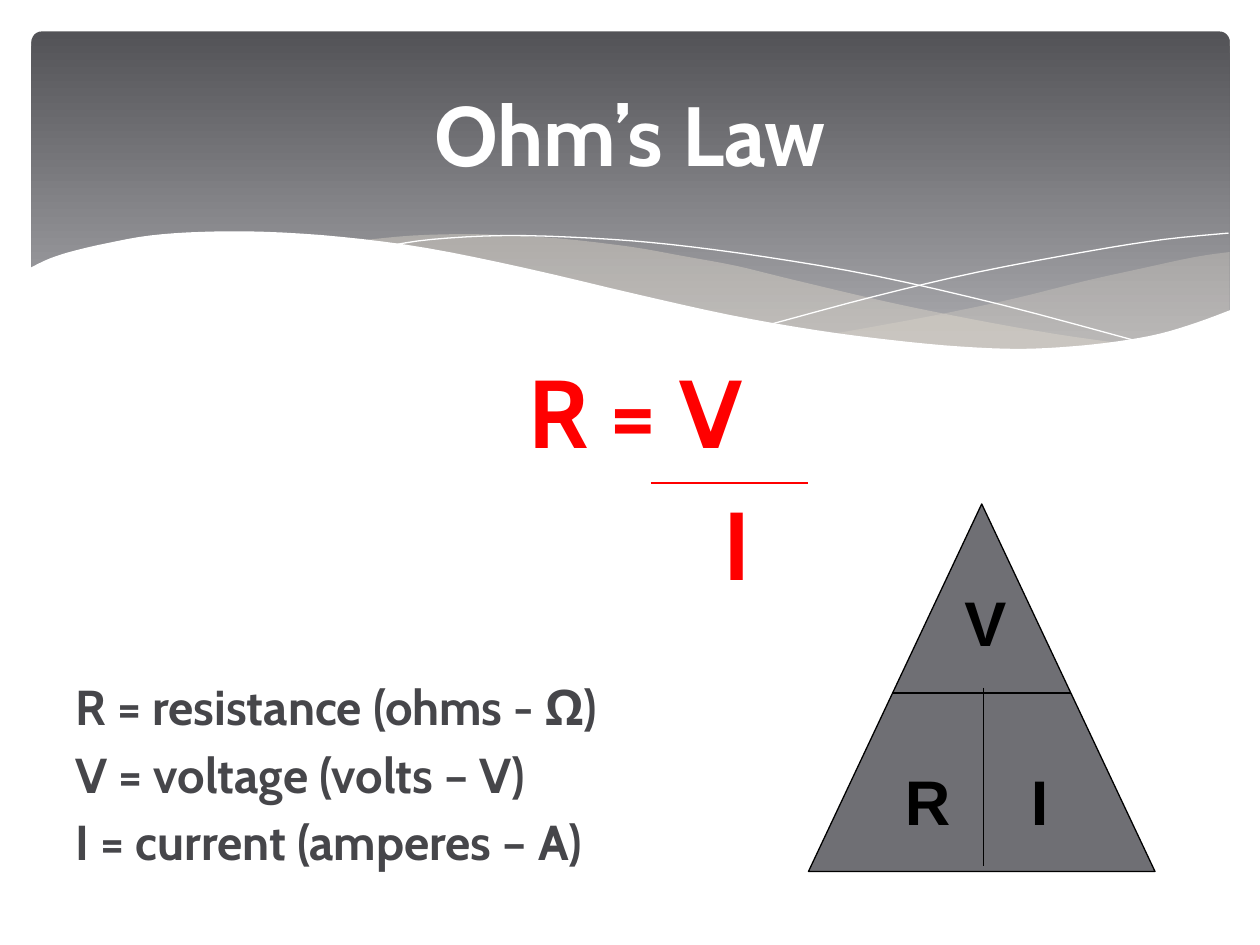
import pptx
import pptx.dml.color
import pptx.enum.shapes
import pptx.enum.text
import pptx.oxml.ns
import pptx.oxml.xmlchemy
import pptx.util

Pt = pptx.util.Pt
SHAPES = pptx.enum.shapes.MSO_SHAPE
ALIGN = pptx.enum.text.PP_ALIGN
ANCHOR = pptx.enum.text.MSO_ANCHOR

RIGHT_SWELL = [
    [(702.7, 144), (682.6, 146.9), (652.3, 153.4), (619.9, 160.6), (579.6, 170.6),
     (542.2, 178.6), (508.3, 185), (475.9, 190.8)],
    [(475.9, 190.8), (507.6, 195.1), (536.4, 198), (562.3, 199.4), (586.1, 200.2),
     (614.9, 198.7), (640.1, 195.8), (663.1, 190.8), (683.3, 185), (702.7, 177.8)],
]
LEFT_SWELL = [
    [(643, 196.6), (602.6, 190.8), (558, 182.9), (508.3, 172.8), (452.9, 159.8),
     (420.5, 151.9), (389.5, 146.2), (360.7, 141.1), (317.5, 136.1), (273.6, 133.9),
     (236.2, 134.6), (205.9, 137.5)],
    [(205.9, 137.5), (246.2, 143.3), (290.9, 151.9), (353.5, 167), (407.5, 178.6),
     (456.5, 187.9), (500.4, 194.4), (538.6, 198.7), (573.1, 200.9), (610.6, 200.2),
     (643, 196.6)],
]
FALLING_LINE = [
    [(222.5, 140.4), (247, 136.8), (288.7, 134.6), (337.7, 136.1), (383, 139.7),
     (437.8, 146.9), (500.4, 157.7), (572.4, 174.2), (653, 195.8)],
]
RISING_LINE = [
    [(441.4, 185), (500.4, 169.2), (558.7, 155.5), (623.5, 143.3), (665.3, 136.8),
     (702, 133.2)],
]
WHITE_WAVE = [
    [(703.4, 177.1), (684, 184.3), (662.4, 190.8), (638.6, 195.1), (612, 198),
     (582.5, 199.4), (547.9, 198), (509.8, 194.4), (465.8, 188.6), (416.9, 180),
     (362.2, 167.8), (301, 153.4), (244.1, 141.8), (195.1, 135.4), (151.9, 132.5),
     (115.9, 132.5), (85.7, 134.6), (61.2, 139), (42.5, 143.3), (28.8, 147.6),
     (16.6, 153.4)],
    [(16.6, 236.9), (703.4, 236.9)],
]


def color(value):
    """Turn a hex string into a colour."""
    return pptx.dml.color.RGBColor.from_string(value)


def smooth_curve(knots, steps=4):
    """Return points of a smooth curve that passes through the knots."""
    if len(knots) < 3:
        return knots
    padded = [knots[0], *knots, knots[-1]]
    points = [knots[0]]
    for a, b, c, d in zip(padded, padded[1:], padded[2:], padded[3:]):
        for step in range(1, steps + 1):
            t = step / steps
            points.append(tuple(
                q + t * (r - p) / 2
                + t ** 2 * (2 * p - 5 * q + 4 * r - s) / 2
                + t ** 3 * (3 * q - p - 3 * r + s) / 2
                for p, q, r, s in zip(a, b, c, d)
            ))
    return points


class SlideBuilder:
    """Holds the style and the current slide."""

    font = "Cabin"
    label_font = "Arial"
    black, white, red, gray, text_gray, sand = (
        "000000", "FFFFFF", "FF0000", "6F6F74", "46464A", "E3DCCF")

    def __init__(self, presentation):
        """Add a blank slide."""
        self.slide = presentation.slides.add_slide(presentation.slide_layouts[6])
        self.shapes = self.slide.shapes

    def paint(self, shape, fill=None, line=None, width=0.75, alpha=None):
        """Set the fill and the outline of a shape."""
        shape.shadow.inherit = False
        if fill:
            shape.fill.solid()
            shape.fill.fore_color.rgb = color(fill)
        else:
            shape.fill.background()
        if alpha:
            value = shape._element.spPr.find(".//" + pptx.oxml.ns.qn("a:srgbClr"))
            node = pptx.oxml.xmlchemy.OxmlElement("a:alpha")
            node.set("val", str(alpha * 1000))
            value.append(node)
        if line:
            shape.line.color.rgb = color(line)
            shape.line.width = Pt(width)
        else:
            shape.line.fill.background()

    def banner(self, box, stops):
        """Add a rounded panel with a vertical gradient."""
        shape = self.shapes.add_shape(SHAPES.ROUNDED_RECTANGLE, *map(Pt, box))
        shape.adjustments[0] = 0.03
        self.paint(shape)
        shape.fill.gradient()
        shape.fill.gradient_angle = 270
        for stop, (position, value) in zip(shape.fill.gradient_stops, stops):
            stop.position = position
            stop.color.rgb = color(value)

    def wave(self, sections, close=True, **style):
        """Add a curved outline."""
        points = [(Pt(x), Pt(y)) for knots in sections for x, y in smooth_curve(knots)]
        builder = self.shapes.build_freeform(*points[0])
        builder.add_line_segments(points[1:], close=close)
        self.paint(builder.convert_to_shape(), **style)

    def triangle(self, box):
        """Add the gray triangle."""
        shape = self.shapes.add_shape(SHAPES.ISOSCELES_TRIANGLE, *map(Pt, box))
        self.paint(shape, self.gray, self.black)

    def line(self, start, end, value):
        """Add a straight thin line."""
        connector = self.shapes.add_connector(
            pptx.enum.shapes.MSO_CONNECTOR.STRAIGHT, *map(Pt, (*start, *end)))
        connector.line.color.rgb = color(value)
        connector.line.width = Pt(0.75)
        connector._element.spPr.append(pptx.oxml.xmlchemy.OxmlElement("a:effectLst"))

    def text(self, box, paragraphs, anchor=ANCHOR.TOP):
        """Add a text box from pairs of text and format values."""
        frame = self.shapes.add_textbox(*map(Pt, box)).text_frame
        frame.word_wrap = True
        frame.vertical_anchor = anchor
        for index, (text, style) in enumerate(paragraphs):
            paragraph = frame.paragraphs[0] if index == 0 else frame.add_paragraph()
            paragraph.alignment = style.get("align", ALIGN.LEFT)
            paragraph.space_before = Pt(style.get("before", 0))
            paragraph._p.get_or_add_pPr().set("marL", str(Pt(style.get("indent", 0))))
            run = paragraph.add_run()
            run.text = text
            run.font.color.rgb = color(style["color"])
            values = {"name": style.get("font", self.font),
                      "size": Pt(style["size"]), "bold": True}
            for name, value in values.items():
                setattr(run.font, name, value)


def main():
    """Build the slide and save it."""
    presentation = pptx.Presentation()
    presentation.slide_width, presentation.slide_height = Pt(720), Pt(540)
    builder = SlideBuilder(presentation)

    builder.banner((18, 18, 684.7, 194.4), [(0, "535357"), (0.9, "A8A8AC")])
    builder.wave(RIGHT_SWELL, fill=builder.sand, alpha=29)
    builder.wave(LEFT_SWELL, fill=builder.sand, alpha=40)
    for curve in (FALLING_LINE, RISING_LINE):
        builder.wave(curve, close=False, line=builder.white, width=0)
    builder.wave(WHITE_WAVE, fill=builder.white)

    formula = {"size": 55, "color": builder.red, "align": ALIGN.CENTER}
    legend = {"size": 28, "color": builder.text_gray, "before": 5}
    builder.text((36, 198, 653.8, 318.2), [
        ("R = V", {**formula, "before": 2.4}),
        ("I", {**formula, "before": 9.2, "indent": 117}),
        ("R = resistance (ohms - Ω)", {**legend, "before": 44}),
        ("V = voltage (volts – V)", legend),
        ("I = current (amperes – A)", legend),
    ])
    title = {"size": 48, "color": builder.white, "align": ALIGN.CENTER}
    builder.text((36, 26.6, 648, 98.6), [("Ohm’s Law", title)], ANCHOR.MIDDLE)

    builder.triangle((462, 288, 198, 210))
    builder.line((510, 396), (612, 396), builder.black)
    builder.line((562, 393), (562, 495), builder.black)
    label = {"size": 36, "color": builder.black, "font": builder.label_font, "before": 2.5}
    for letter, left, top in (("V", 544, 330), ("R", 510, 432), ("I", 582, 432)):
        builder.text((left, top, 36, 50.4), [(letter, label)])
    builder.line((372, 276), (462, 276), builder.red)

    presentation.save("out.pptx")


if __name__ == "__main__":
    main()
